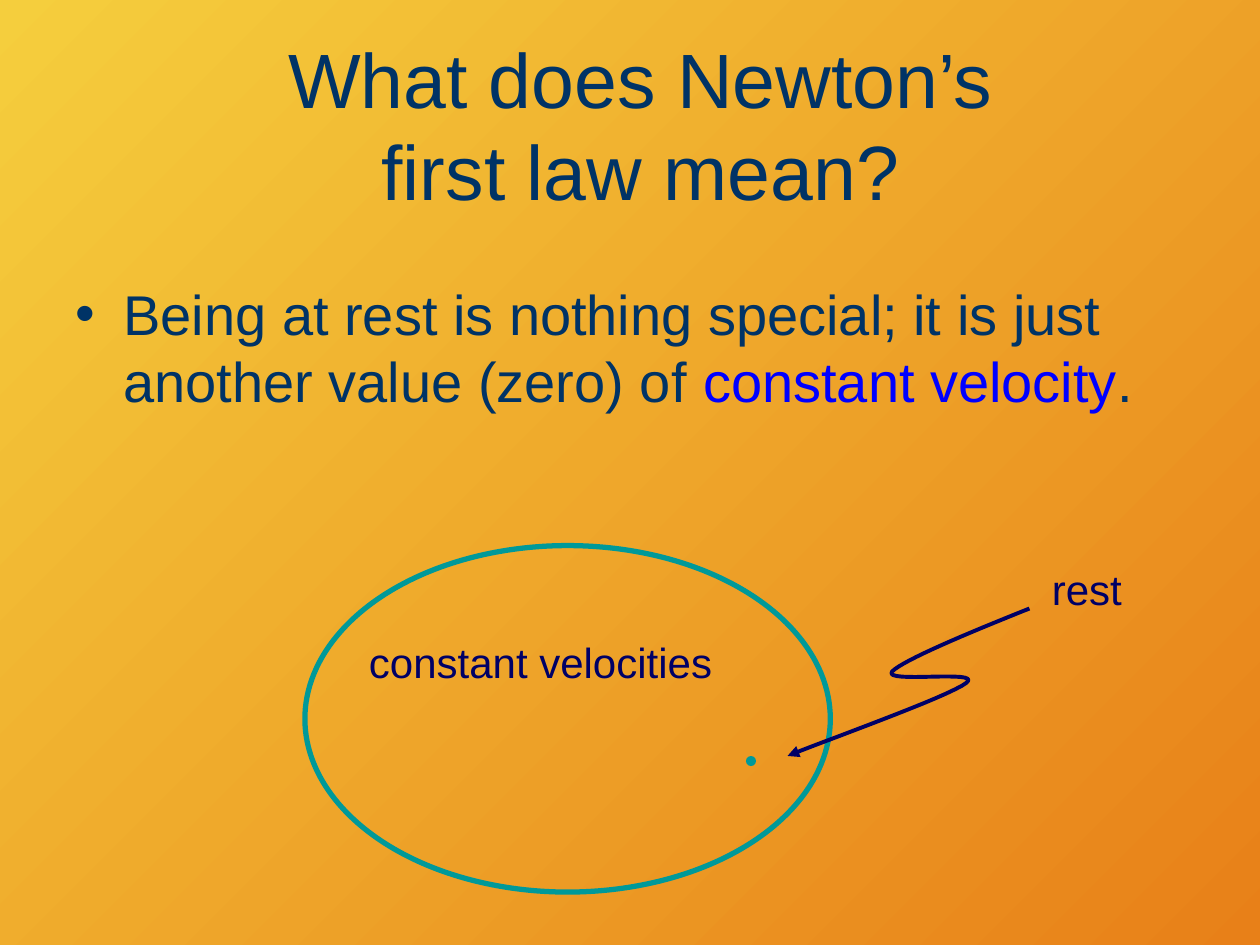
from lxml import etree
from pptx import Presentation
from pptx.dml.color import RGBColor
from pptx.enum.shapes import MSO_SHAPE
from pptx.enum.text import MSO_ANCHOR, MSO_AUTO_SIZE, PP_ALIGN
from pptx.oxml.ns import qn
from pptx.util import Inches, Pt

OVAL = MSO_SHAPE.OVAL
MIDDLE, TOP = MSO_ANCHOR.MIDDLE, MSO_ANCHOR.TOP
CENTER, LEFT = PP_ALIGN.CENTER, PP_ALIGN.LEFT
NO_FIT, GROW = MSO_AUTO_SIZE.NONE, MSO_AUTO_SIZE.SHAPE_TO_FIT_TEXT

COLORS = {
    "yellow": "F5CE3D",
    "orange": "E88018",
    "text": "003366",
    "accent": "0000FF",
    "teal": "009999",
    "navy": "000066",
}
FONT = "Arial"

TITLE = [("What does Newton’s first law mean?", "text")]
STATEMENT = [
    ("Being at rest is nothing special; it is just another value (zero) of ", "text"),
    ("constant velocity", "accent"),
    (".", "text"),
]
LABELS = [
    ("constant velocities", (2.83, 5, 3, 0.5)),
    ("rest", (8.25, 4.42, 0.83, 0.5)),
]
VELOCITY_SET = (2.42, 4.33, 4.17, 2.75)
REST_POINT = (5.92, 6, 0.08, 0.08)
ARROW_START = (8.17, 4.83)
ARROW_CURVES = [
    ((7.67, 5.03), (7.17, 5.24), (7.08, 5.33)),
    ((7, 5.43), (7.81, 5.31), (7.67, 5.42)),
    ((7.53, 5.53), (6.49, 5.9), (6.25, 6)),
]
CURVE_STEPS = 16


def rgb(name):
    return RGBColor.from_string(COLORS[name])


def place(shape, bounds):
    shape.left, shape.top, shape.width, shape.height = map(Inches, bounds)


def write(box, spans, size, align=LEFT, anchor=TOP, fit=NO_FIT, bullet=None):
    frame = box.text_frame
    frame.word_wrap = True
    frame.auto_size = fit
    frame.vertical_anchor = anchor
    para = frame.paragraphs[0]
    if bullet:
        properties = para._p.get_or_add_pPr()
        properties.set("marL", str(Inches(0.38)))
        properties.set("indent", str(-Inches(0.38)))
        etree.SubElement(properties, qn("a:buChar")).set("char", bullet)
    para.alignment = align
    para.space_before = Pt(0)
    for text, color in spans:
        span = para.add_run()
        span.text = text
        span.font.name = FONT
        span.font.size = Pt(size)
        span.font.color.rgb = rgb(color)


def add_ellipse(shapes, bounds):
    ellipse = shapes.add_shape(OVAL, *map(Inches, bounds))
    ellipse.shadow.inherit = False
    return ellipse


def curve_points(start, curves):
    points = []
    for first, second, end in curves:
        for step in range(1, CURVE_STEPS + 1):
            t = step / CURVE_STEPS
            u = 1 - t
            points.append(tuple(
                Inches(u**3 * a + 3 * u * u * t * b + 3 * u * t * t * c + t**3 * d)
                for a, b, c, d in zip(start, first, second, end)
            ))
        start = end
    return points


def add_curved_arrow(shapes):
    builder = shapes.build_freeform(*map(Inches, ARROW_START))
    builder.add_line_segments(curve_points(ARROW_START, ARROW_CURVES), close=False)
    arrow = builder.convert_to_shape()
    arrow.shadow.inherit = False
    arrow.fill.background()
    arrow.line.color.rgb = rgb("navy")
    arrow.line.width = Pt(2.25)
    line = arrow.line._get_or_add_ln()
    etree.SubElement(line, qn("a:round"))
    etree.SubElement(line, qn("a:tailEnd")).set("type", "triangle")


def add_diagram(slide):
    shapes = slide.shapes.add_group_shape().shapes
    velocity_set = add_ellipse(shapes, VELOCITY_SET)
    velocity_set.fill.background()
    velocity_set.line.color.rgb = rgb("teal")
    velocity_set.line.width = Pt(3)

    rest_point = add_ellipse(shapes, REST_POINT)
    rest_point.fill.solid()
    rest_point.fill.fore_color.rgb = rgb("teal")
    rest_point.line.fill.background()

    for text, bounds in LABELS:
        label = shapes.add_textbox(*map(Inches, bounds))
        write(label, [(text, "navy")], size=24, fit=GROW)
    add_curved_arrow(shapes)


def main():
    deck = Presentation()
    deck.slide_width, deck.slide_height = Inches(10), Inches(7.5)
    slide = deck.slides.add_slide(deck.slide_layouts[1])

    backdrop = slide.background.fill
    backdrop.gradient()
    backdrop.gradient_angle = 315
    for stop, color in zip(backdrop.gradient_stops, ("yellow", "orange")):
        stop.color.rgb = rgb(color)

    title, body = slide.placeholders
    place(title, (1.92, 0.42, 6.33, 1.12))
    write(title, TITLE, size=44, align=CENTER, anchor=MIDDLE)
    place(body, (0.5, 2.17, 9, 1.58))
    write(body, STATEMENT, size=32, bullet="•")

    add_diagram(slide)
    deck.save("out.pptx")


if __name__ == "__main__":
    main()
